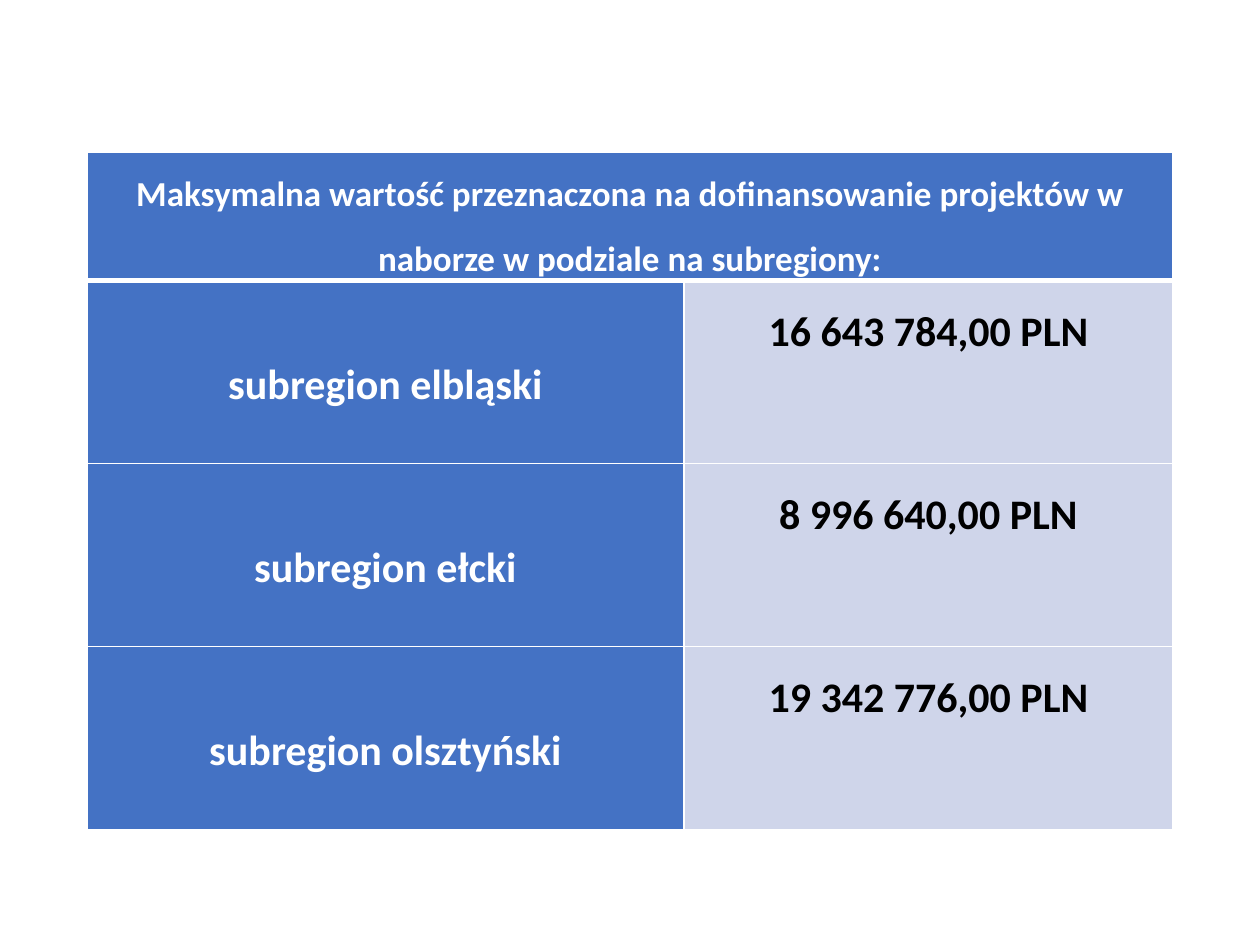
from dataclasses import dataclass

from lxml.etree import SubElement
from pptx import Presentation
from pptx.dml.color import RGBColor
from pptx.enum.text import MSO_ANCHOR as Anchor, PP_ALIGN as Align
from pptx.oxml.ns import qn
from pptx.util import Emu, Pt

COLORS = {"white": "FFFFFF", "blue": "4472C4", "pale": "CFD5EA", "black": "000000"}
COLUMN_WIDTHS = (597, 489)
HEADER_HEIGHT = 100
REGION_HEIGHT = 183
HEADING = "Maksymalna wartość przeznaczona na dofinansowanie projektów w naborze w podziale na subregiony:"


@dataclass(frozen=True)
class Allocation:
    subregion: str
    amount: str


@dataclass(frozen=True)
class CellStyle:
    fill: str
    ink: str
    size: int
    anchor: Anchor


ALLOCATIONS = (
    Allocation("subregion elbląski", "16 643 784,00 PLN"),
    Allocation("subregion ełcki", "8 996 640,00 PLN"),
    Allocation("subregion olsztyński", "19 342 776,00 PLN"),
)
HEADING_STYLE = CellStyle("blue", "white", 20, Anchor.TOP)
SUBREGION_STYLE = CellStyle("blue", "white", 24, Anchor.MIDDLE)
AMOUNT_STYLE = CellStyle("pale", "black", 24, Anchor.TOP)


def px(length: int) -> Emu:
    return Emu(round(length * 914400 / 126))


def color(name: str) -> RGBColor:
    return RGBColor.from_string(COLORS[name])


def style_cell(cell, style: CellStyle, top: int = 1, bottom: int = 1) -> None:
    properties = cell._tc.get_or_add_tcPr()
    for side, width in (("L", 1), ("R", 1), ("T", top), ("B", bottom)):
        border = SubElement(properties, qn(f"a:ln{side}"), w=str(Pt(width)))
        paint = SubElement(border, qn("a:solidFill"))
        SubElement(paint, qn("a:srgbClr"), val=COLORS["white"])
    cell.fill.solid()
    cell.fill.fore_color.rgb = color(style.fill)
    cell.vertical_anchor = style.anchor
    cell.margin_left = cell.margin_right = px(9)
    cell.margin_top = cell.margin_bottom = 0


def write_cell(cell, text: str, style: CellStyle) -> None:
    paragraph = cell.text_frame.paragraphs[0]
    paragraph.alignment = Align.CENTER
    paragraph.line_spacing = 1.5
    paragraph.space_after = Pt(6)
    run = paragraph.add_run()
    run.text = text
    run.font.name = "Calibri"
    run.font.size = Pt(style.size)
    run.font.bold = True
    run.font.color.rgb = color(style.ink)


def main() -> None:
    deck = Presentation()
    deck.slide_width, deck.slide_height = px(1260), px(945)
    slide = deck.slides.add_slide(deck.slide_layouts[6])
    heights = [HEADER_HEIGHT] + [REGION_HEIGHT] * len(ALLOCATIONS)
    table = slide.shapes.add_table(
        len(heights), len(COLUMN_WIDTHS), px(87), px(152), px(sum(COLUMN_WIDTHS)), px(sum(heights))
    ).table
    for column, width in zip(table.columns, COLUMN_WIDTHS):
        column.width = px(width)
    for row, height in zip(table.rows, heights):
        row.height = px(height)

    heading = table.cell(0, 0)
    heading.merge(table.cell(0, 1))
    for cell in table.rows[0].cells:
        style_cell(cell, HEADING_STYLE, bottom=3)
    write_cell(heading, HEADING, HEADING_STYLE)

    for index, allocation in enumerate(ALLOCATIONS, start=1):
        entries = ((allocation.subregion, SUBREGION_STYLE), (allocation.amount, AMOUNT_STYLE))
        for cell, (text, style) in zip(table.rows[index].cells, entries):
            style_cell(cell, style, top=3 if index == 1 else 1)
            write_cell(cell, text, style)

    deck.save("out.pptx")


if __name__ == "__main__":
    main()
